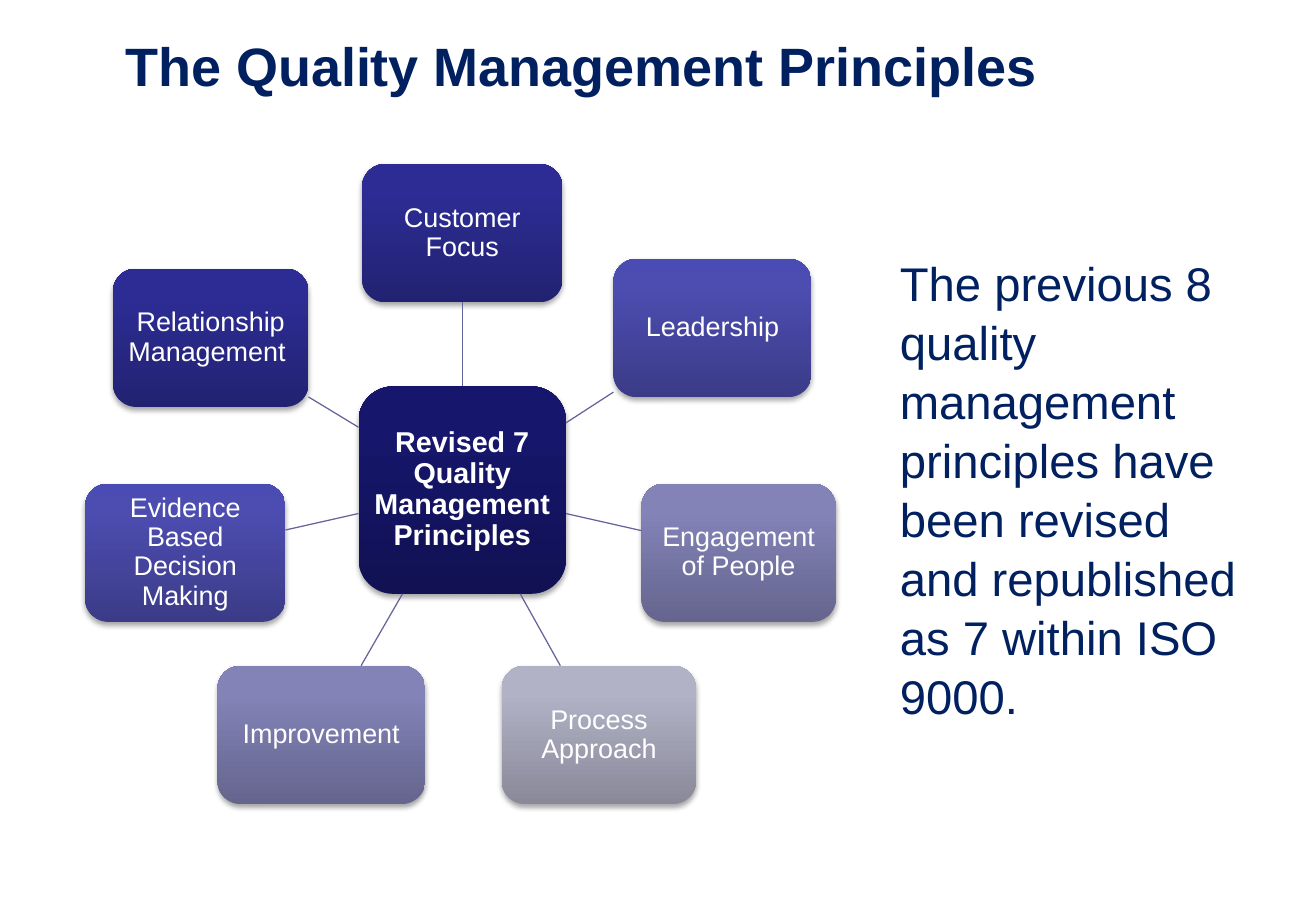
import copy

import pptx
import pptx.dml.color
import pptx.enum.shapes
import pptx.enum.text
import pptx.oxml
import pptx.oxml.ns
import pptx.util

Pt = pptx.util.Pt
FONT = "Arial"
COLORS = {
    "navy": "002060",
    "white": "FFFFFF",
    "spoke": "64649B",
}
GRADIENTS = {
    "hub": ("111154", "16166D", "15156F"),
    "dark": ("222272", "2C2C94", "2B2B97"),
    "medium": ("3B3B88", "4D4DB1", "4B4BB4"),
    "light": ("65658E", "8383B8", "8383BA"),
    "gray": ("898999", "B2B2C7", "B2B2C8"),
}
STOP_POSITIONS = (0, 0.8, 1)
HUB = ("Revised 7 Quality Management Principles", 274, 290.5, 123, 123, "hub")
NODE_HEIGHT = 82
PRINCIPLES = [
    ("Customer Focus", 274, 138.2, 118.8, "dark"),
    ("Leadership", 422.3, 194.4, 117.4, "medium"),
    ("Engagement of People", 437.8, 327.6, 115.2, "light"),
    ("Process Approach", 355, 435.6, 115.2, "gray"),
    ("Improvement", 190.4, 435.6, 123.1, "light"),
    ("Evidence Based Decision Making", 109.8, 327.6, 118.8, "medium"),
    ("Relationship Management ", 124.9, 200.2, 115.9, "dark"),
]
SHADOW = (
    '<a:outerShdw xmlns:a="http://schemas.openxmlformats.org/drawingml/2006/main" '
    'blurRad="40000" dist="23000" dir="5400000" rotWithShape="0">'
    '<a:srgbClr val="000000"><a:alpha val="35000"/></a:srgbClr></a:outerShdw>'
)


def rgb(value):
    return pptx.dml.color.RGBColor.from_string(value)


def write_text(text_frame, text, size, color, alignment, bold=False, spacing=1.0):
    text_frame.word_wrap = True
    paragraph = text_frame.paragraphs[0]
    paragraph.alignment = alignment
    paragraph.line_spacing = spacing
    run = paragraph.add_run()
    run.text = text
    run.font.name = FONT
    run.font.size = Pt(size)
    run.font.bold = bold
    run.font.color.rgb = rgb(COLORS[color])


def apply_gradient(shape, name):
    shape.fill.gradient()
    shape.fill.gradient_angle = 90
    stop_list = shape._element.spPr.find(".//" + pptx.oxml.ns.qn("a:gsLst"))
    stop_list.append(copy.deepcopy(stop_list[-1]))
    stops = zip(shape.fill.gradient_stops, STOP_POSITIONS, GRADIENTS[name])
    for stop, position, color in stops:
        stop.position = position
        stop.color.rgb = rgb(color)


def add_box(slide, text, center_x, center_y, width, height, gradient, size, bold=False):
    shape = slide.shapes.add_shape(
        pptx.enum.shapes.MSO_SHAPE.ROUNDED_RECTANGLE,
        Pt(center_x - width / 2), Pt(center_y - height / 2), Pt(width), Pt(height),
    )
    apply_gradient(shape, gradient)
    shape.line.fill.background()
    shape.shadow.inherit = False
    effects = shape._element.spPr.find(pptx.oxml.ns.qn("a:effectLst"))
    effects.append(pptx.oxml.parse_xml(SHADOW))
    frame = shape.text_frame
    frame.margin_left = frame.margin_right = Pt(3)
    frame.margin_top = frame.margin_bottom = Pt(3)
    frame.vertical_anchor = pptx.enum.text.MSO_ANCHOR.MIDDLE
    write_text(frame, text, size, "white", pptx.enum.text.PP_ALIGN.CENTER, bold, 0.9)
    return shape


def border_point(shape, other):
    center_x, center_y = shape.left + shape.width / 2, shape.top + shape.height / 2
    run = other.left + other.width / 2 - center_x
    rise = other.top + other.height / 2 - center_y
    scale = 1 / max(abs(run) * 2 / shape.width, abs(rise) * 2 / shape.height)
    return round(center_x + run * scale), round(center_y + rise * scale)


def add_spoke(slide, hub, node):
    connector = slide.shapes.add_connector(
        pptx.enum.shapes.MSO_CONNECTOR.STRAIGHT,
        *border_point(hub, node), *border_point(node, hub),
    )
    connector.line.color.rgb = rgb(COLORS["spoke"])
    connector.line.width = Pt(0.75)
    properties = connector._element.spPr
    properties.append(properties.makeelement(pptx.oxml.ns.qn("a:effectLst"), {}))
    return connector


def add_title(slide, text):
    title = slide.shapes.title
    title.left, title.top, title.width, title.height = Pt(67), Pt(0), Pt(686), Pt(77)
    title.text_frame.vertical_anchor = pptx.enum.text.MSO_ANCHOR.MIDDLE
    write_text(title.text_frame, text, 32, "navy", pptx.enum.text.PP_ALIGN.LEFT, True)


def add_note(slide, text):
    note = slide.shapes.add_textbox(Pt(526.3), Pt(146), Pt(215.3), Pt(278.6))
    write_text(note.text_frame, text, 28, "navy", pptx.enum.text.PP_ALIGN.LEFT, spacing=1.04)


def main():
    presentation = pptx.Presentation()
    presentation.slide_width, presentation.slide_height = Pt(780), Pt(540)
    slide = presentation.slides.add_slide(presentation.slide_layouts[5])
    add_title(slide, "The Quality Management Principles")
    hub = add_box(slide, *HUB, size=17, bold=True)
    for text, center_x, center_y, width, gradient in PRINCIPLES:
        node = add_box(slide, text, center_x, center_y, width, NODE_HEIGHT, gradient, 16)
        spoke = add_spoke(slide, hub, node)
        if center_x == HUB[1]:
            spoke.begin_connect(hub, 0)
            spoke.end_connect(node, 2)
    add_note(
        slide,
        "The previous 8 quality management principles have been revised "
        "and republished as 7 within ISO 9000.",
    )
    presentation.save("out.pptx")


if __name__ == "__main__":
    main()
